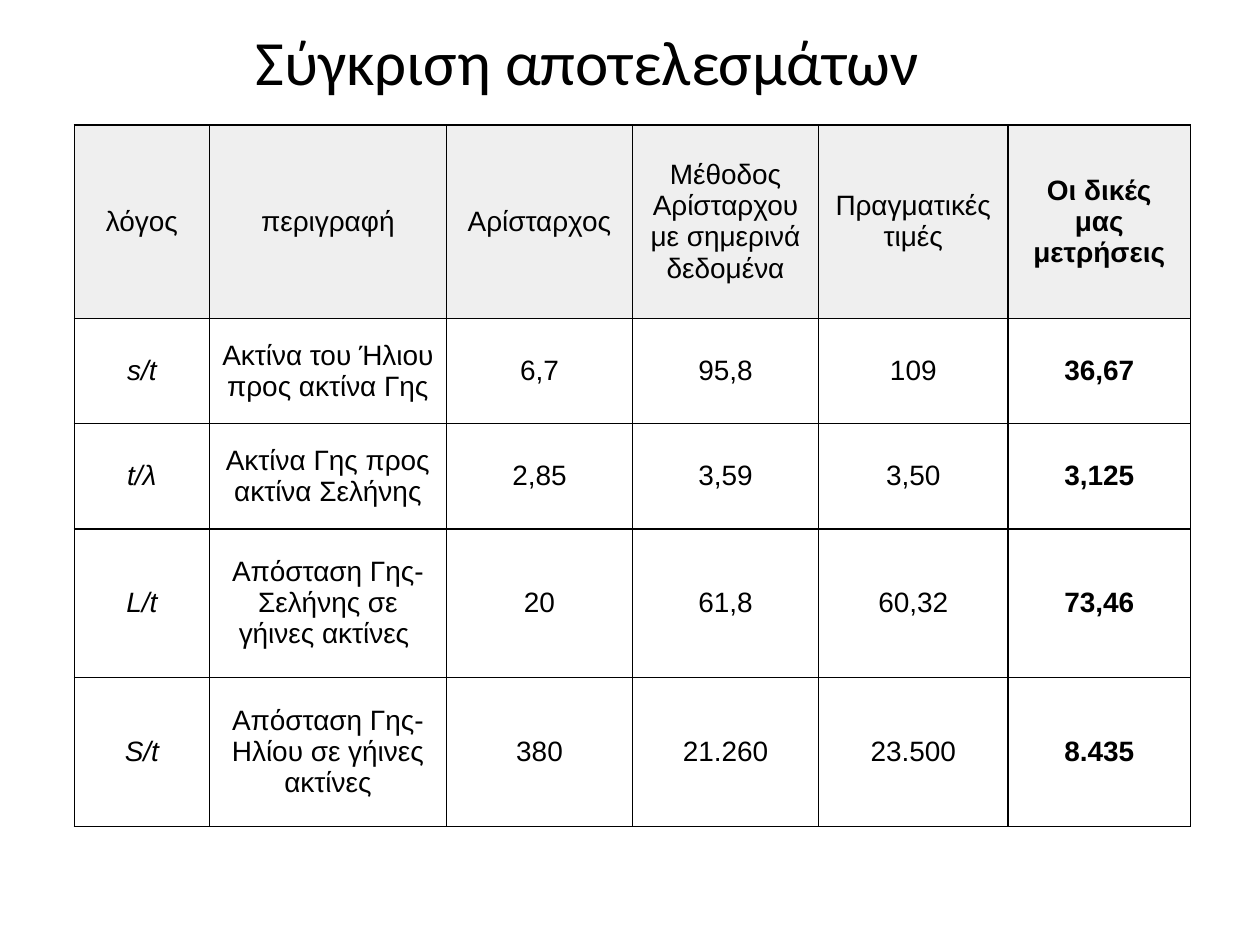
import dataclasses

import pptx
import pptx.dml.color
import pptx.enum.text
import pptx.oxml
import pptx.oxml.ns
import pptx.slide
import pptx.table
import pptx.text.text
import pptx.util

COLORS = {"text": "000000", "border": "000000", "header": "EFEFEF"}
COLUMN_WIDTHS = (2.72, 4.78, 3.75, 3.75, 3.82, 3.68)
ROW_HEIGHTS = (3.9, 2.12, 2.12, 3, 3)
BORDER_POINTS = 1


@dataclasses.dataclass(frozen=True)
class Comparison:
    ratio: str
    description: str
    aristarchus: str
    modern_method: str
    actual: str
    measured: str


HEADER = Comparison(
    "λόγος",
    "περιγραφή",
    "Αρίσταρχος",
    "Μέθοδος Αρίσταρχου με σημερινά δεδομένα",
    "Πραγματικές τιμές",
    "Οι δικές μας μετρήσεις",
)
COMPARISONS = (
    Comparison("s/t", "Ακτίνα του Ήλιου προς ακτίνα Γης", "6,7", "95,8", "109", "36,67"),
    Comparison("t/λ", "Ακτίνα Γης προς ακτίνα Σελήνης", "2,85", "3,59", "3,50", "3,125"),
    Comparison("L/t", "Απόσταση Γης-Σελήνης σε γήινες ακτίνες ", "20", "61,8", "60,32", "73,46"),
    Comparison("S/t", "Απόσταση Γης-Ηλίου σε γήινες ακτίνες", "380", "21.260", "23.500", "8.435"),
)


def format_runs(
    paragraph: pptx.text.text._Paragraph,
    font_name: str,
    size: int,
    bold: bool = False,
    italic: bool = False,
) -> None:
    for run in paragraph.runs:
        run.font.name = font_name
        run.font.size = pptx.util.Pt(size)
        run.font.bold = bold
        run.font.italic = italic
        run.font.color.rgb = pptx.dml.color.RGBColor.from_string(COLORS["text"])


def add_borders(cell: pptx.table._Cell) -> None:
    properties = cell._tc.get_or_add_tcPr()
    width = pptx.util.Pt(BORDER_POINTS)
    for position, side in enumerate(("lnL", "lnR", "lnT", "lnB")):
        border = pptx.oxml.parse_xml(
            f'<a:{side} {pptx.oxml.ns.nsdecls("a")} w="{width}"><a:solidFill>'
            f'<a:srgbClr val="{COLORS["border"]}"/></a:solidFill></a:{side}>'
        )
        properties.insert(position, border)


def draw_title(slide: pptx.slide.Slide, text: str) -> None:
    title = slide.shapes.add_textbox(
        pptx.util.Cm(4.9), pptx.util.Cm(0.33), pptx.util.Cm(15.6), pptx.util.Cm(1.8)
    )
    title.text_frame.word_wrap = True
    title.text_frame.auto_size = pptx.enum.text.MSO_AUTO_SIZE.SHAPE_TO_FIT_TEXT
    title.text_frame.text = text
    format_runs(title.text_frame.paragraphs[0], "Calibri", 36)


def draw_cell(cell: pptx.table._Cell, text: str, header: bool, bold: bool, italic: bool) -> None:
    cell.vertical_anchor = pptx.enum.text.MSO_ANCHOR.MIDDLE
    if header:
        cell.fill.solid()
        cell.fill.fore_color.rgb = pptx.dml.color.RGBColor.from_string(COLORS["header"])
    else:
        cell.fill.background()
    add_borders(cell)
    cell.text_frame.text = text
    paragraph = cell.text_frame.paragraphs[0]
    paragraph.alignment = pptx.enum.text.PP_ALIGN.CENTER
    format_runs(paragraph, "Arial", 16, bold, italic)


def draw_table(slide: pptx.slide.Slide) -> None:
    table = slide.shapes.add_table(
        len(ROW_HEIGHTS),
        len(COLUMN_WIDTHS),
        pptx.util.Cm(1.5),
        pptx.util.Cm(2.52),
        pptx.util.Cm(sum(COLUMN_WIDTHS)),
        pptx.util.Cm(sum(ROW_HEIGHTS)),
    ).table
    table.horz_banding = False
    table.first_row = False
    for column, width in zip(table.columns, COLUMN_WIDTHS):
        column.width = pptx.util.Cm(width)
    for row, height in zip(table.rows, ROW_HEIGHTS):
        row.height = pptx.util.Cm(height)
    last_column = len(COLUMN_WIDTHS) - 1
    for row_index, comparison in enumerate((HEADER, *COMPARISONS)):
        header = row_index == 0
        for column_index, text in enumerate(dataclasses.astuple(comparison)):
            draw_cell(
                table.cell(row_index, column_index),
                text,
                header=header,
                bold=column_index == last_column,
                italic=column_index == 0 and not header,
            )


def main() -> None:
    presentation = pptx.Presentation()
    presentation.slide_width = pptx.util.Cm(25.4)
    presentation.slide_height = pptx.util.Cm(19.05)
    slide = presentation.slides.add_slide(presentation.slide_layouts[6])
    draw_title(slide, "Σύγκριση αποτελεσμάτων")
    draw_table(slide)
    presentation.save("out.pptx")


if __name__ == "__main__":
    main()
